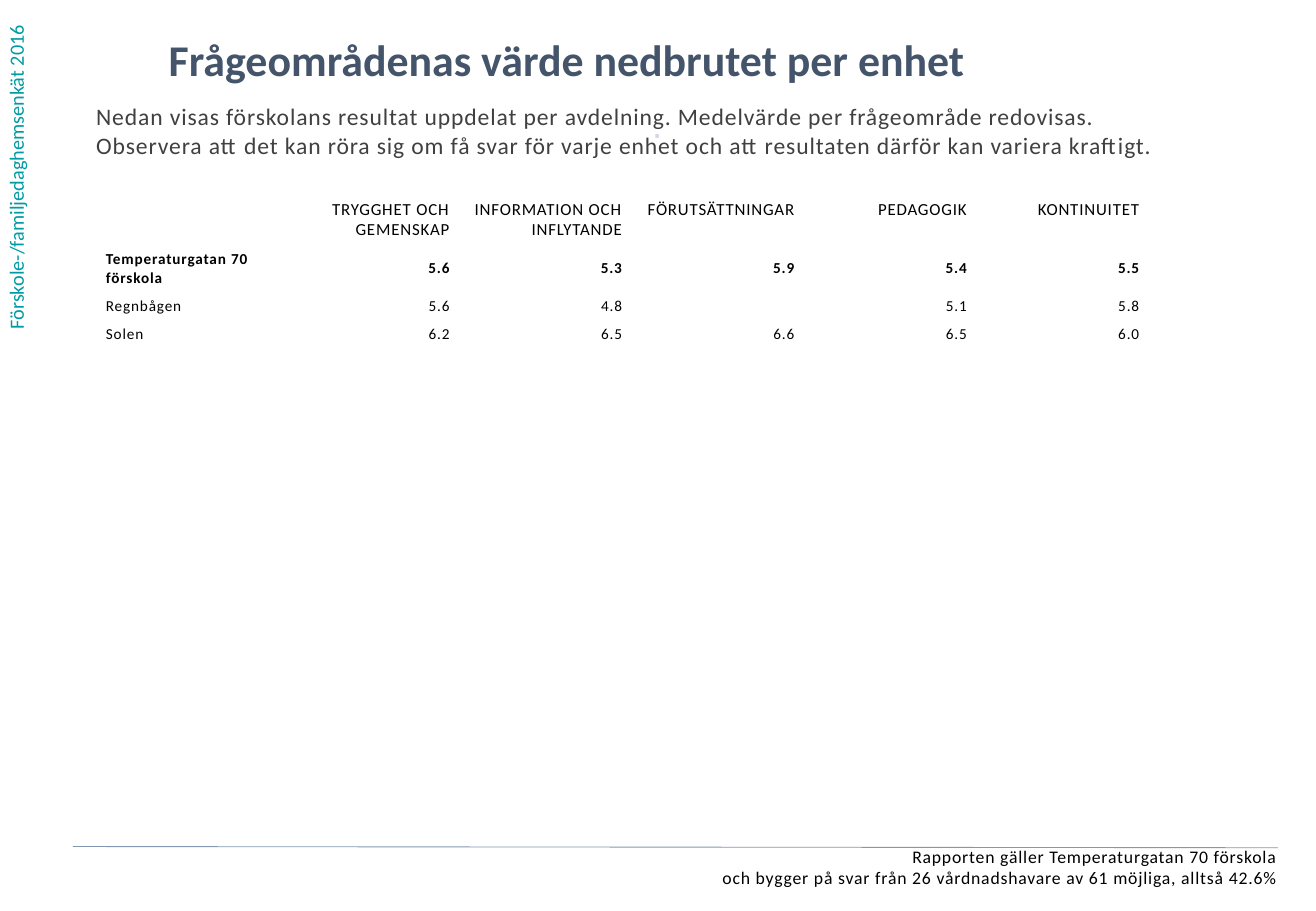
from lxml.etree import SubElement
from pptx import Presentation
from pptx.dml.color import RGBColor
from pptx.enum.shapes import MSO_CONNECTOR
from pptx.enum.text import MSO_ANCHOR, MSO_AUTO_SIZE, PP_ALIGN
from pptx.oxml.ns import qn
from pptx.util import Pt

HEADS = ["", "TRYGGHET OCH GEMENSKAP", "INFORMATION OCH INFLYTANDE",
         "FÖRUTSÄTTNINGAR", "PEDAGOGIK", "KONTINUITET", ""]
ROWS = [
    HEADS,
    ["Temperaturgatan 70 förskola", "5.6", "5.3", "5.9", "5.4", "5.5", ""],
    ["Regnbågen", "5.6", "4.8", "", "5.1", "5.8", ""],
    ["Solen", "6.2", "6.5", "6.6", "6.5", "6.0", ""],
]
WIDTHS = [113] + [102.2] * 5 + [98]
HEIGHTS = [30.2, 27.7, 16.7, 16.7]


def color(code):
    return RGBColor.from_string(code)


def write(para, lines, size, code, bold=False, gap=0, align=PP_ALIGN.LEFT):
    para.alignment = align
    for i, line in enumerate(lines):
        if i:
            para.add_line_break()
        run = para.add_run()
        run.text = line
        font = run.font
        font.name = "Calibri"
        font.size = Pt(size)
        font.bold = bold
        font.color.rgb = color(code)
        if gap:
            run._r.get_or_add_rPr().set("spc", str(gap))


def place(shape, box):
    shape.left, shape.top, shape.width, shape.height = map(Pt, box)


def clear(frame):
    frame.word_wrap = True
    frame.auto_size = MSO_AUTO_SIZE.NONE
    frame.vertical_anchor = MSO_ANCHOR.TOP
    frame.margin_left = frame.margin_right = 0
    frame.margin_top = frame.margin_bottom = 0


def add_title(slide, box):
    title = slide.shapes.title
    place(title, box)
    clear(title.text_frame)
    write(title.text_frame.paragraphs[0],
          ["Frågeområdenas värde nedbrutet per enhet"], 26, "44546A", True)


def add_text(slide, box, lines, size, code, **style):
    frame = slide.shapes.add_textbox(*map(Pt, box)).text_frame
    clear(frame)
    write(frame.paragraphs[0], lines, size, code, **style)


def add_side(slide, box):
    side = slide.shapes.add_textbox(*map(Pt, box))
    side.text_frame.word_wrap = True
    side.element.find(".//" + qn("a:bodyPr")).set("vert", "vert270")
    write(side.text_frame.paragraphs[0],
          ["Förskole-/familjedaghemsenkät 2016"], 12, "009BA4")


def add_edges(cell, row, col):
    last = len(ROWS) - 1
    edges = {
        "L": col == 0,
        "R": col == len(HEADS) - 1,
        "T": row < 2,
        "B": row in (0, last),
    }
    props = cell._tc.get_or_add_tcPr()
    for side, shown in edges.items():
        line = SubElement(props, qn("a:ln" + side), w="6350")
        if shown:
            fill = SubElement(line, qn("a:solidFill"))
            SubElement(fill, qn("a:srgbClr"), val="FFFFFF")
        else:
            SubElement(line, qn("a:noFill"))


def add_cell(cell, text, row, col):
    add_edges(cell, row, col)
    size = 9 if row else 10
    cell.margin_left = cell.margin_right = Pt(5.76)
    cell.margin_top = cell.margin_bottom = Pt(2.88)
    if row:
        cell.fill.background()
        cell.vertical_anchor = MSO_ANCHOR.MIDDLE
    else:
        cell.fill.solid()
        cell.fill.fore_color.rgb = color("FFFFFF")
    para = cell.text_frame.paragraphs[0]
    if text:
        write(para, [text], size, "000000", bold=row == 1, gap=50,
              align=PP_ALIGN.RIGHT if col else PP_ALIGN.LEFT)
    else:
        SubElement(para._p, qn("a:endParaRPr"), sz=str(size * 100))


def add_scores(slide, left, top):
    size = map(Pt, (left, top, sum(WIDTHS), sum(HEIGHTS)))
    table = slide.shapes.add_table(len(ROWS), len(HEADS), *size).table
    table.first_row = False
    table.horz_banding = False
    for col, width in enumerate(WIDTHS):
        table.columns[col].width = Pt(width)
    for row, texts in enumerate(ROWS):
        table.rows[row].height = Pt(HEIGHTS[row])
        for col, text in enumerate(texts):
            add_cell(table.cell(row, col), text, row, col)


def add_foot(slide, box):
    left, top, width, height = box
    add_text(slide, box, [
        "Rapporten gäller Temperaturgatan 70 förskola",
        "och bygger på svar från 26 vårdnadshavare av 61 möjliga, alltså 42.6%",
    ], 10.5, "000000", gap=50, align=PP_ALIGN.RIGHT)
    rule = slide.shapes.add_connector(
        MSO_CONNECTOR.STRAIGHT, Pt(left + 34.6), Pt(top + 0.7),
        Pt(left + width), Pt(top + 1.4))
    rule.line.color.rgb = color("8497B0")
    rule.line.width = Pt(0.5)
    SubElement(rule.element.spPr, qn("a:effectLst"))


def main():
    deck = Presentation()
    deck.slide_width = Pt(780)
    deck.slide_height = Pt(540)
    slide = deck.slides.add_slide(deck.slide_layouts[5])
    add_side(slide, (-1.4, 0, 28.8, 202.3))
    add_title(slide, (100, 19.4, 600, 41))
    add_text(slide, (57, 60.5, 681, 72.7), [
        "Nedan visas förskolans resultat uppdelat per avdelning. "
        "Medelvärde per frågeområde redovisas.",
        "Observera att det kan röra sig om få svar för varje enhet "
        "och att resultaten därför kan variera kraftigt.",
    ], 14, "404040", gap=50)
    add_text(slide, (278.6, 73.4, 221.8, 28), ["⋅"], 12, "D2D9E2",
             bold=True, gap=50, align=PP_ALIGN.CENTER)
    add_scores(slide, 57, 115.2)
    add_foot(slide, (8.6, 501.1, 748.8, 31))
    deck.save("out.pptx")


if __name__ == "__main__":
    main()
